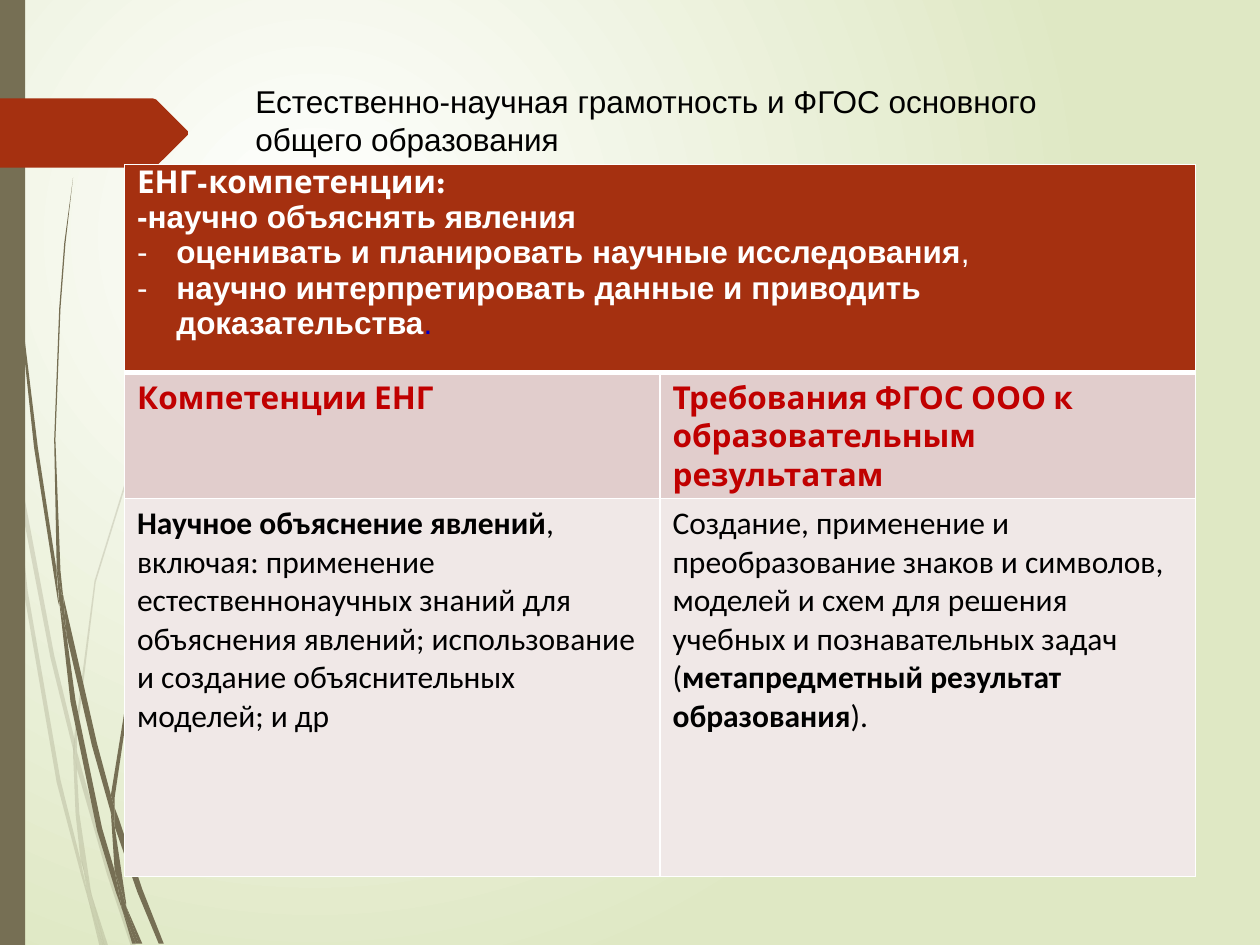
from dataclasses import dataclass
from itertools import groupby
from typing import NamedTuple

from lxml.etree import SubElement as Sub
from pptx import Presentation
from pptx.dml.color import RGBColor as RGB
from pptx.enum.shapes import MSO_SHAPE as Shape
from pptx.enum.text import MSO_AUTO_SIZE as AutoSize
from pptx.oxml.ns import qn
from pptx.util import Cm, Pt


@dataclass(frozen=True)
class Theme:
    olive: str = "766F54"
    rust: str = "A53010"
    red: str = "C00000"
    blue: str = "0000CC"
    black: str = "000000"
    white: str = "FFFFFF"
    glow: str = "DFE8C4"
    rose: str = "E1CDCC"
    pale: str = "F0E8E7"
    size: int = 18
    thin: int = 1
    thick: int = 3


class Run(NamedTuple):
    text: str
    bold: bool = False
    color: str = ""


class Para(NamedTuple):
    runs: list
    font: str
    color: str
    bullet: bool = False


class Blade(NamedTuple):
    """A grass piece between two edges, in hundredths of an inch."""
    edge: list
    back: list


T = Theme()
UNIT = Cm(0.0254)

PALE_BLADES = [
    Blade([(8, 350), (6, 322), (0, 282)], [(0, 299), (7, 344), (8, 350)]),
    Blade([(10, 345), (43, 520), (59, 586)], [(59, 599), (40, 522), (12, 376), (10, 345)]),
    Blade([(61, 596), (64, 607), (88, 692), (108, 751)], [(104, 751), (85, 694), (61, 610)]),
    Blade([(73, 711), (86, 751)], [(83, 751), (73, 711)]),
    Blade([(8, 350), (12, 376), (22, 469), (48, 619), (64, 683), (69, 707), (70, 714)],
          [(70, 714), (64, 693), (45, 621), (19, 470), (8, 350)]),
    Blade([(58, 599), (61, 608), (61, 610), (63, 646), (72, 706), (73, 711)],
          [(73, 711), (67, 692), (64, 683), (60, 646), (58, 599)]),
    Blade([(61, 596), (61, 584), (76, 462), (111, 349), (159, 245), (187, 198), (201, 175), (217, 154)],
          [(217, 153), (201, 175), (186, 197), (158, 244), (110, 348), (75, 461), (59, 584), (59, 586)]),
    Blade([(70, 714), (82, 751)], [(79, 751), (70, 714)]),
    Blade([(59, 586), (61, 596), (61, 610)], [(61, 608), (58, 599), (59, 586)]),
    Blade([(65, 683), (67, 692), (73, 711), (83, 751)], [(82, 751), (70, 714), (69, 707), (65, 683)]),
]

DARK_BLADES = [
    Blade([(2, 0), (3, 48), (5, 110), (14, 233), (27, 355), (46, 477), (47, 481)],
          [(45, 457), (45, 453), (30, 355), (15, 232), (6, 109), (4, 48), (3, 0)]),
    Blade([(50, 472), (77, 590), (88, 631)], [(88, 645), (73, 592), (53, 505), (50, 472)]),
    Blade([(91, 641), (94, 649), (113, 706), (130, 749)], [(126, 749), (109, 708), (91, 656)]),
    Blade([(47, 477), (53, 505), (60, 556), (81, 657), (91, 691), (96, 717), (97, 722)],
          [(97, 722), (92, 708), (77, 659), (56, 557), (47, 477)]),
    Blade([(50, 472), (48, 453), (44, 349), (48, 245), (52, 193), (58, 141)],
          [(58, 141), (51, 193), (47, 245), (43, 349), (45, 449), (49, 472)]),
    Blade([(100, 719), (113, 749)], [(110, 749), (100, 719)]),
    Blade([(45, 449), (49, 472), (50, 472), (53, 505)], [(47, 477), (45, 453), (45, 449)]),
    Blade([(91, 641), (91, 633), (103, 552), (131, 476), (169, 406), (191, 374), (203, 359), (216, 344)],
          [(215, 344), (203, 358), (191, 373), (168, 405), (129, 474), (101, 551), (88, 631)]),
    Blade([(97, 722), (108, 749)], [(105, 749), (97, 722)]),
    Blade([(88, 645), (90, 651), (91, 656), (100, 716), (100, 719)],
          [(100, 719), (96, 706), (91, 691), (88, 645)]),
    Blade([(88, 631), (91, 641), (91, 656)], [(90, 651), (88, 645), (88, 631)]),
    Blade([(91, 691), (96, 706), (100, 719), (110, 749)], [(108, 749), (97, 722), (96, 717), (91, 691)]),
]

POINTER = [(149, 107), (124, 132), (121, 133), (0, 133), (0, 78), (121, 78), (124, 79), (149, 104)]


def paint(sp, color: str, alpha: int = 100) -> None:
    sp.shadow.inherit = False
    sp.fill.solid()
    sp.fill.fore_color.rgb = RGB.from_string(color)
    sp.line.fill.background()
    if alpha < 100:
        clr = sp._element.spPr.find(".//" + qn("a:srgbClr"))
        Sub(clr, qn("a:alpha"), val=str(alpha * 1000))


def add_outline(shapes, points: list, color: str, alpha: int = 100) -> None:
    start, *rest = [(x * UNIT, y * UNIT) for x, y in points]
    builder = shapes.build_freeform(*start, scale=1.0)
    builder.add_line_segments(rest, close=True)
    paint(builder.convert_to_shape(), color, alpha)


def add_grass(s, blades: list, alpha: int) -> None:
    group = s.shapes.add_group_shape()
    for blade in blades:
        outline = [point for point, _ in groupby(blade.edge + blade.back)]
        if outline[-1] == outline[0]:
            outline.pop()
        add_outline(group.shapes, outline, T.olive, alpha)


def write(tf, paras: list) -> None:
    for i, para in enumerate(paras):
        p = tf.add_paragraph() if i else tf.paragraphs[0]
        if para.bullet:
            pPr = p._p.get_or_add_pPr()
            pPr.set("marL", str(Cm(0.79)))
            pPr.set("indent", str(-Cm(0.79)))
            Sub(pPr, qn("a:buFont"), typeface=para.font)
            Sub(pPr, qn("a:buChar"), char="-")
        for run in para.runs:
            r = p.add_run()
            r.text = run.text
            r.font.name, r.font.size, r.font.bold = para.font, Pt(T.size), run.bold
            r.font.color.rgb = RGB.from_string(run.color or para.color)


def fill_cell(cell, paras: list, color: str, top: int, bottom: int) -> None:
    tcPr = cell._tc.get_or_add_tcPr()
    for side, width in zip("LRTB", (T.thin, T.thin, top, bottom)):
        ln = Sub(tcPr, qn(f"a:ln{side}"), w=str(Pt(width)))
        Sub(Sub(ln, qn("a:solidFill")), qn("a:srgbClr"), val=T.white)
    cell.fill.solid()
    cell.fill.fore_color.rgb = RGB.from_string(color)
    write(cell.text_frame, paras)


def set_background(s) -> None:
    fill = s.background.fill
    fill.gradient()
    for stop, color in zip(fill.gradient_stops, (T.white, T.glow)):
        stop.color.rgb = RGB.from_string(color)
    grad = s._element.find(".//" + qn("a:gradFill"))
    grad.remove(grad.find(qn("a:lin")))
    Sub(Sub(grad, qn("a:path"), path="circle"), qn("a:fillToRect"),
        l="50000", t="50000", r="100000", b="100000")


def heading(text: str) -> Para:
    return Para([Run(text, True)], "Cabin", T.red)


def body(*runs: Run) -> Para:
    return Para(list(runs), "Calibri", T.black)


def competence(*runs: Run, bullet: bool = True) -> Para:
    return Para(list(runs), "Arial", T.white, bullet)


# Table rows: height in cm, fill, paragraphs of each cell
ROWS = [
    (4.19, T.rust, [[
        Para([Run("ЕНГ-компетенции:", True)], "League Spartan", T.white),
        competence(Run("-научно объяснять явления", True), bullet=False),
        competence(Run("оценивать и планировать научные исследования", True), Run(",")),
        competence(Run("научно интерпретировать данные и приводить доказательства", True),
                   Run(".", color=T.blue))], []]),
    (2, T.rose, [
        [heading("Компетенции ЕНГ")],
        [heading("Требования ФГОС ООО к"), heading("образовательным результатам")]]),
    (7.62, T.pale, [
        [body(Run("Научное объяснение явлений", True), Run(",")),
         body(Run("включая: применение")),
         body(Run("естественнонаучных знаний для")),
         body(Run("объяснения явлений; использование и создание объяснительных моделей; и др"))],
        [body(Run("Создание, применение и")),
         body(Run("преобразование знаков и символов,")),
         body(Run("моделей и схем для решения учебных и познавательных задач")),
         body(Run("("), Run("метапредметный результат", True)),
         body(Run("образования", True), Run(")."))]]),
]


def add_competence_table(s) -> None:
    table = s.shapes.add_table(3, 2, Cm(2.51), Cm(3.32), Cm(21.59), Cm(13.81)).table
    table.cell(0, 0).merge(table.cell(0, 1))
    for i, (height, color, cells) in enumerate(ROWS):
        table.rows[i].height = Cm(height)
        top = T.thick if i == 1 else T.thin
        bottom = T.thick if i == 0 else T.thin
        for j, paras in enumerate(cells):
            fill_cell(table.cell(i, j), paras, color, top, bottom)


def main() -> None:
    prs = Presentation()
    prs.slide_width, prs.slide_height = Cm(25.4), Cm(19.05)
    s = prs.slides.add_slide(prs.slide_layouts[6])
    set_background(s)

    # Grass, side bar and pointer
    add_grass(s, PALE_BLADES, 20)
    add_grass(s, DARK_BLADES, 100)
    paint(s.shapes.add_shape(Shape.RECTANGLE, 0, 0, Cm(0.51), prs.slide_height), T.olive)
    add_outline(s.shapes, POINTER, T.rust)

    # Title
    tf = s.shapes.add_textbox(Cm(4.9), Cm(1.53), Cm(16.99), Cm(1.8)).text_frame
    tf.word_wrap, tf.auto_size = True, AutoSize.SHAPE_TO_FIT_TEXT
    write(tf, [Para([Run(line)], "Arial", T.black) for line in
               ("Естественно-научная грамотность и ФГОС основного", "общего образования")])

    add_competence_table(s)
    prs.save("out.pptx")


if __name__ == "__main__":
    main()
